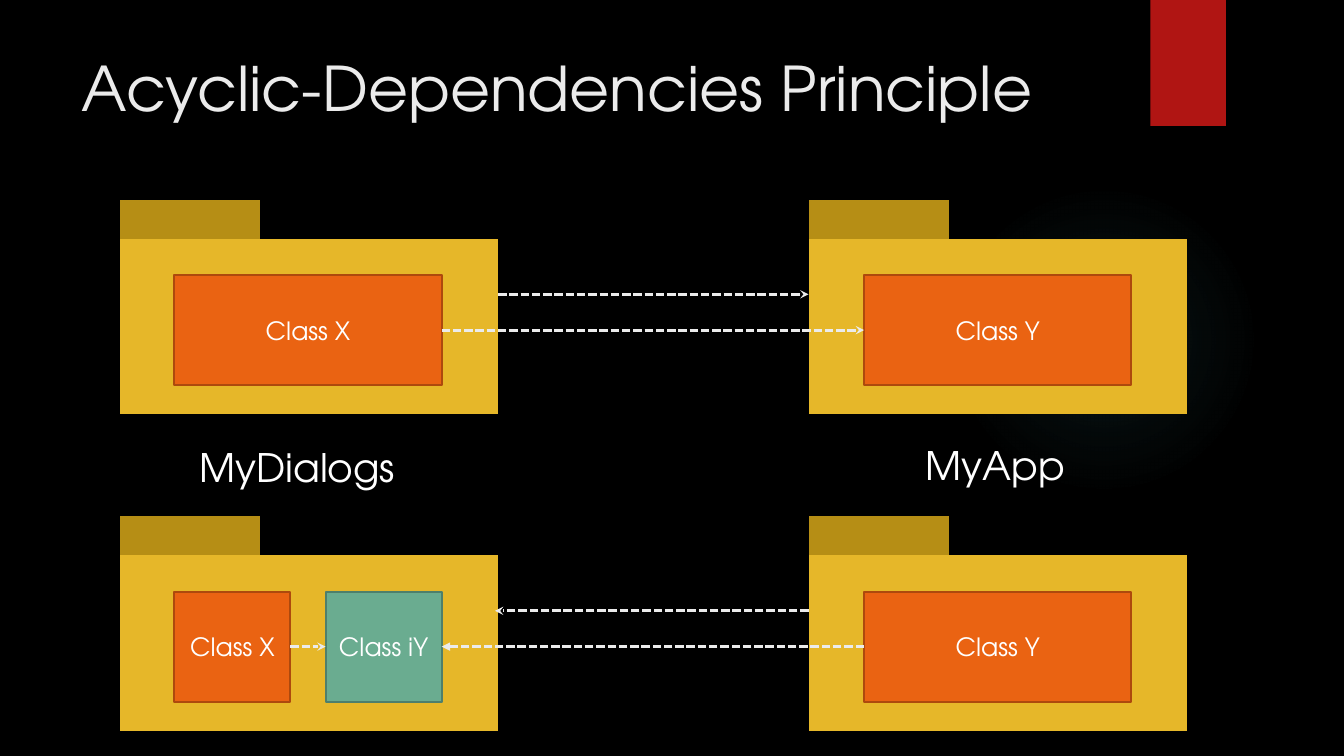
from dataclasses import dataclass

from lxml import etree
from pptx import Presentation
from pptx.dml.color import RGBColor
from pptx.enum.dml import MSO_LINE
from pptx.enum.shapes import MSO_CONNECTOR, MSO_SHAPE
from pptx.enum.text import MSO_ANCHOR, MSO_AUTO_SIZE, PP_ALIGN
from pptx.oxml import parse_xml
from pptx.oxml.ns import nsdecls, qn
from pptx.shapes.autoshape import Shape
from pptx.shapes.connector import Connector
from pptx.slide import Slide
from pptx.text.text import TextFrame
from pptx.util import Inches, Pt

RECT = MSO_SHAPE.RECTANGLE
PROCESS = MSO_SHAPE.FLOWCHART_PROCESS
OVAL = MSO_SHAPE.OVAL
STRAIGHT = MSO_CONNECTOR.STRAIGHT
DASH = MSO_LINE.SQUARE_DOT
TOP, MIDDLE = MSO_ANCHOR.TOP, MSO_ANCHOR.MIDDLE
LEFT, CENTER = PP_ALIGN.LEFT, PP_ALIGN.CENTER
NO_FIT, GROW = MSO_AUTO_SIZE.NONE, MSO_AUTO_SIZE.SHAPE_TO_FIT_TEXT

BLACK = RGBColor(0x00, 0x00, 0x00)
WHITE = RGBColor(0xFF, 0xFF, 0xFF)
PALE = RGBColor(0xEB, 0xEB, 0xEB)
RED = RGBColor(0xB0, 0x15, 0x13)
GOLD = RGBColor(0xE6, 0xB7, 0x29)
OCHRE = RGBColor(0xB6, 0x8E, 0x15)
ORANGE = RGBColor(0xEA, 0x63, 0x12)
RUST = RGBColor(0xAD, 0x49, 0x0D)
GREEN = RGBColor(0x6A, 0xAC, 0x90)
MOSS = RGBColor(0x4E, 0x7F, 0x6B)
TEAL = RGBColor(0x50, 0xB9, 0xC1)

FONT = "TeX Gyre Adventor"
LEFT_X, RIGHT_X = 1.19, 8.02
FOLD_W = 3.75
ROWS = (1.98, 5.12)
WIDE, SLIM = 2.65, 1.15
LEFT_SIDE, RIGHT_SIDE = 1, 3


@dataclass(frozen=True)
class Card:
    name: str
    x: float
    row: float
    width: float
    fill: RGBColor = ORANGE
    edge: RGBColor = RUST


@dataclass(frozen=True)
class Label:
    text: str
    x: float
    y: float
    width: float


CARDS = {
    "top x": Card("Class X", 1.73, ROWS[0], WIDE),
    "top y": Card("Class Y", 8.57, ROWS[0], WIDE),
    "low x": Card("Class X", 1.73, ROWS[1], SLIM),
    "low y": Card("Class Y", 8.57, ROWS[1], WIDE),
    "low iy": Card("Class iY", 3.23, ROWS[1], SLIM, GREEN, MOSS),
}
LABELS = (
    Label("MyDialogs", 1.88, 4.35, 2.16),
    Label("MyApp", 9.08, 4.33, 1.63),
)
LINKS = (
    ("top x", RIGHT_SIDE, "top y", LEFT_SIDE, "stealth"),
    ("low x", RIGHT_SIDE, "low iy", LEFT_SIDE, "stealth"),
    ("low y", LEFT_SIDE, "low iy", RIGHT_SIDE, "triangle"),
)
FOLD_LINKS = (
    (LEFT_X + FOLD_W, RIGHT_X, ROWS[0] + 0.94),
    (RIGHT_X, 4.91, ROWS[1] + 0.94),
)


def write(frame: TextFrame, text: str, *, size: float, color: RGBColor = WHITE,
          align: PP_ALIGN = LEFT, anchor: MSO_ANCHOR = TOP,
          wrap: bool = True, fit: MSO_AUTO_SIZE = NO_FIT) -> None:
    frame.word_wrap = wrap
    frame.auto_size = fit
    frame.vertical_anchor = anchor
    line = frame.paragraphs[0]
    line.alignment = align
    run = line.add_run()
    run.text = text
    run.font.name = FONT
    run.font.size = Pt(size)
    run.font.color.rgb = color


def block(shapes, kind: MSO_SHAPE, x: float, y: float, width: float,
          height: float, fill: RGBColor) -> Shape:
    shape = shapes.add_shape(kind, Inches(x), Inches(y), Inches(width), Inches(height))
    shape.shadow.inherit = False
    shape.fill.solid()
    shape.fill.fore_color.rgb = fill
    shape.line.fill.background()
    return shape


def glow(slide: Slide) -> None:
    shape = block(slide.shapes, OVAL, 9.41, 1.83, 3.08, 3.08, TEAL)
    stops = "".join(
        f'<a:gs pos="{pos * 1000}"><a:srgbClr val="{TEAL}">'
        f'<a:alpha val="{alpha * 1000}"/></a:srgbClr></a:gs>'
        for pos, alpha in ((0, 7), (36, 6), (69, 0), (100, 0))
    )
    fade = parse_xml(
        f'<a:gradFill {nsdecls("a")}><a:gsLst>{stops}</a:gsLst><a:path path="circle">'
        '<a:fillToRect l="50000" t="50000" r="50000" b="50000"/></a:path></a:gradFill>'
    )
    props = shape._element.spPr
    props.replace(props.find(qn("a:solidFill")), fade)


def folder(slide: Slide, x: float, y: float) -> None:
    group = slide.shapes.add_group_shape()
    block(group.shapes, PROCESS, x, y, 1.39, 1.25, OCHRE)
    block(group.shapes, PROCESS, x, y + 0.39, FOLD_W, 1.74, GOLD)


def card(slide: Slide, item: Card) -> Shape:
    shape = block(slide.shapes, RECT, item.x, item.row + 0.75, item.width, 1.09, item.fill)
    shape.line.color.rgb = item.edge
    shape.line.width = Pt(1.5)
    write(shape.text_frame, item.name, size=18, align=CENTER, anchor=MIDDLE)
    return shape


def arrow(slide: Slide, start: float, end: float, y: float, tip: str) -> Connector:
    link = slide.shapes.add_connector(STRAIGHT, Inches(start), Inches(y), Inches(end), Inches(y))
    link.line.color.rgb = PALE
    link.line.width = Pt(2)
    link.line.dash_style = DASH
    etree.SubElement(link.line._get_or_add_ln(), qn("a:tailEnd"), type=tip)
    etree.SubElement(link._element.spPr, qn("a:effectLst"))
    return link


def main() -> None:
    deck = Presentation()
    deck.slide_width, deck.slide_height = Inches(13.33), Inches(7.5)
    slide = deck.slides.add_slide(deck.slide_layouts[5])
    slide.background.fill.solid()
    slide.background.fill.fore_color.rgb = BLACK

    glow(slide)
    block(slide.shapes, RECT, 11.41, 0, 0.75, 1.25, RED)
    title = slide.shapes.title
    title.left, title.top = Inches(0.71), Inches(0.45)
    title.width, title.height = Inches(10.29), Inches(1.53)
    write(title.text_frame, "Acyclic-Dependencies Principle", size=44, color=PALE)

    for row in ROWS:
        for x in (LEFT_X, RIGHT_X):
            folder(slide, x, row)
    cards = {key: card(slide, item) for key, item in CARDS.items()}

    for label in LABELS:
        box = slide.shapes.add_textbox(
            Inches(label.x), Inches(label.y), Inches(label.width), Inches(0.57))
        write(box.text_frame, label.text, size=28, wrap=False, fit=GROW)

    for start, end, y in FOLD_LINKS:
        arrow(slide, start, end, y, "stealth")
    for first, out, last, into, tip in LINKS:
        link = arrow(slide, 0, 1, 0, tip)
        link.begin_connect(cards[first], out)
        link.end_connect(cards[last], into)

    deck.save("out.pptx")


if __name__ == "__main__":
    main()
